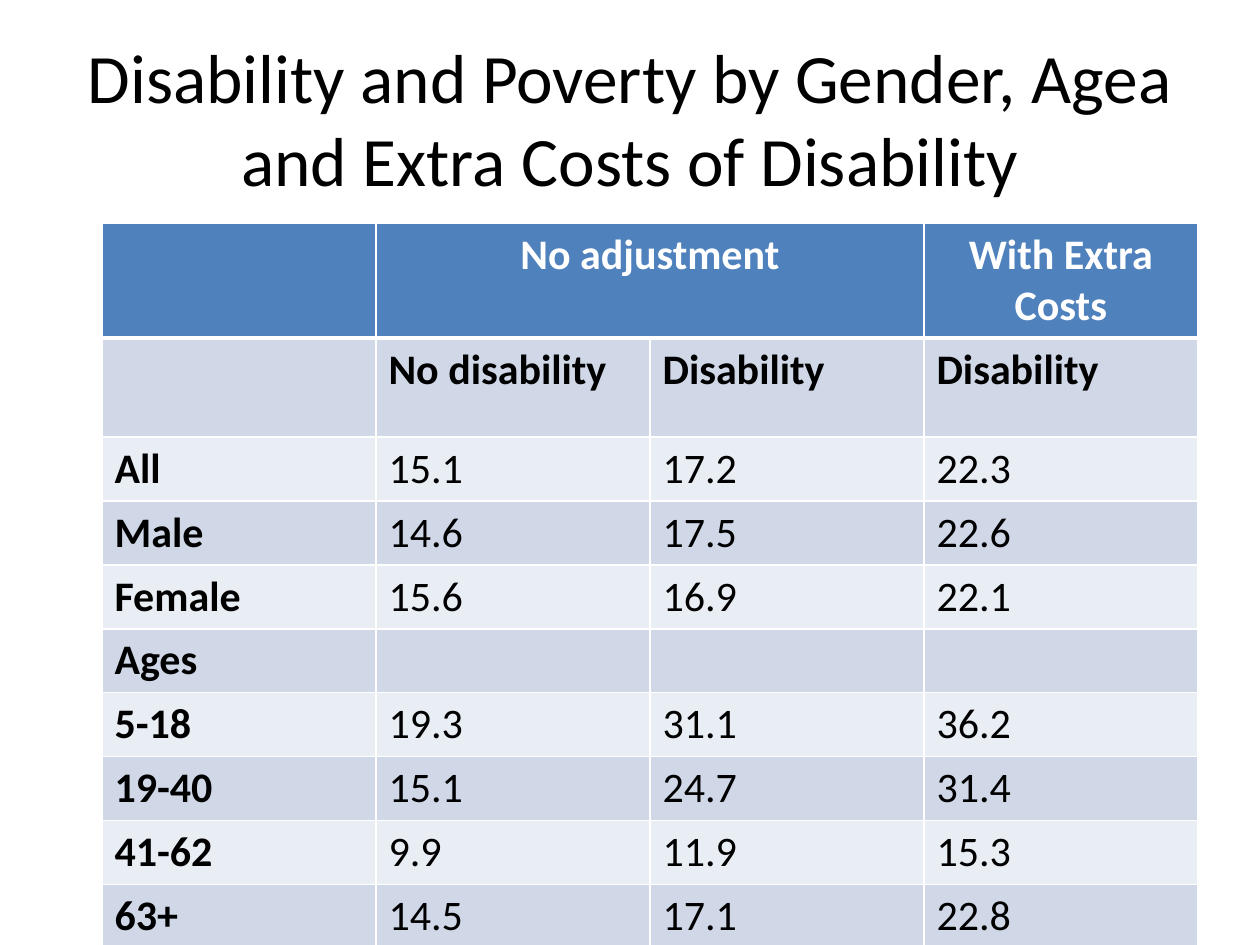
from lxml.etree import fromstring
from pptx import Presentation
from pptx.dml.color import RGBColor
from pptx.enum.text import MSO_ANCHOR, MSO_AUTO_SIZE, PP_ALIGN
from pptx.oxml.ns import nsdecls
from pptx.util import Emu, Pt

PX = 914400 / 126
BLACK = RGBColor(0x00, 0x00, 0x00)
WHITE = RGBColor(0xFF, 0xFF, 0xFF)
HEADER = RGBColor(0x4F, 0x81, 0xBD)
BANDS = [RGBColor(0xE9, 0xED, 0xF4), RGBColor(0xD0, 0xD8, 0xE8)]

COL_W, TALL_ROW, ROW = 274, 99, 60
ROWS = [
    ["", "No adjustment", "", "With Extra Costs"],
    ["", "No disability", "Disability", "Disability"],
    ["All", "15.1", "17.2", "22.3"],
    ["Male", "14.6", "17.5", "22.6"],
    ["Female", "15.6", "16.9", "22.1"],
    ["Ages", "", "", ""],
    ["5-18", "19.3", "31.1", "36.2"],
    ["19-40", "15.1", "24.7", "31.4"],
    ["41-62", "9.9", "11.9", "15.3"],
    ["63+", "14.5", "17.1", "22.8"],
]


def px(*values):
    """Turn px lengths into EMU."""
    return [Emu(round(v * PX)) for v in values]


def write(tf, text, align, **font):
    p = tf.paragraphs[0]
    p.alignment = align
    r = p.add_run()
    r.text = text
    r.font.name = "Calibri"
    r.font.color.rgb = font.pop("color")
    for name, value in font.items():
        setattr(r.font, name, value)


prs = Presentation()
prs.slide_width, prs.slide_height = px(1260, 945)
s = prs.slides.add_slide(prs.slide_layouts[5])

title = s.shapes.title
title.left, title.top, title.width, title.height = px(63, 38, 1134, 158)
tf = title.text_frame
tf.word_wrap = True
tf.auto_size = MSO_AUTO_SIZE.NONE
tf.vertical_anchor = MSO_ANCHOR.MIDDLE
write(tf, "Disability and Poverty by Gender, Agea and Extra Costs of Disability",
      PP_ALIGN.CENTER, color=BLACK, size=Pt(39.6))

heights = [TALL_ROW] * 2 + [ROW] * (len(ROWS) - 2)
table = s.shapes.add_table(len(ROWS), 4, *px(102, 223, 4 * COL_W, sum(heights))).table
for col in table.columns:
    col.width = px(COL_W)[0]
for row, height in zip(table.rows, heights):
    row.height = px(height)[0]
table.cell(0, 1).merge(table.cell(0, 2))

for i, texts in enumerate(ROWS):
    is_header = i == 0
    for j, text in enumerate(texts):
        cell = table.cell(i, j)
        cell.fill.solid()
        cell.fill.fore_color.rgb = HEADER if is_header else BANDS[i % 2]
        if text:
            write(cell.text_frame, text, PP_ALIGN.CENTER if is_header else PP_ALIGN.LEFT,
                  color=WHITE if is_header else BLACK, size=Pt(24), bold=i < 2 or j == 0)
        # Borders come before the fill in the cell properties
        widths = {"L": 1, "R": 1, "T": 3 if i == 1 else 1, "B": 3 if is_header else 1}
        for k, (side, width) in enumerate(widths.items()):
            cell._tc.get_or_add_tcPr().insert(k, fromstring(
                f'<a:ln{side} {nsdecls("a")} w="{Pt(width)}"><a:solidFill>'
                f'<a:srgbClr val="{WHITE}"/></a:solidFill></a:ln{side}>'))

prs.save("out.pptx")
